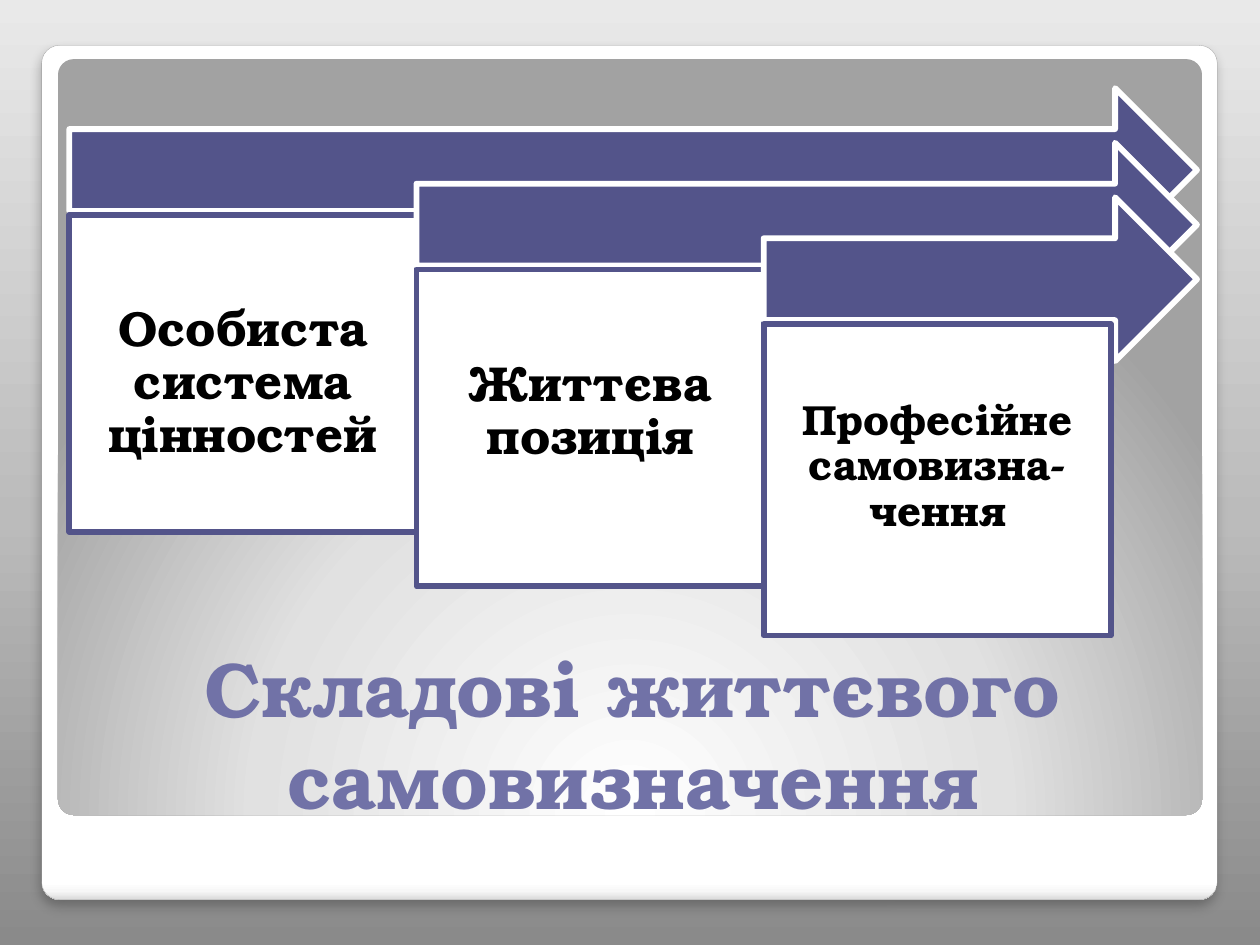
import pptx
import pptx.util
import pptx.dml.color
import pptx.enum.shapes
import pptx.enum.text
import pptx.oxml
import pptx.oxml.ns

Pt = pptx.util.Pt
MSO = pptx.enum.shapes.MSO_SHAPE
ANCHOR = pptx.enum.text.MSO_ANCHOR
CENTER = pptx.enum.text.PP_ALIGN.CENTER
FONT = "TeX Gyre Bonum"
NS = pptx.oxml.ns.nsdecls("a")

TITLE = "Складові життєвого самовизначення"
STEPS = [
    {"text": "Особиста система цінностей", "size": 28, "inset": 8.64, "top_inset": 51, "height": 181},
    {"text": "Життєва позиція", "size": 28, "inset": 8.64, "top_inset": 51, "height": 181},
    {"text": "Професійне самовизна-чення", "size": 24, "inset": 7.2, "top_inset": 43, "height": 178},
]
BACKGROUND = [(0, "8A8A8A"), (45, "BBBBBB"), (100, "E9E9E9")]
CARD = [(0, "FFFFFF"), (98, "FFFFFF"), (99, "F7F7F7"), (100, "DADADA")]
PANEL = [(0, "FFFFFF"), (55, "E1E1E1"), (100, "A2A2A2")]
RADIAL = ('<a:path path="circle"><a:fillToRect l="50000" t="175000" '
          'r="50000" b="-75000"/></a:path>')

LEFT, RIGHT, TOP = 39.6, 684, 50.4
STEP_X, STEP_Y = 198.4, 31.2
ARROW_H, BOX_DROP = 93.6, 72.4


def color(value):
    return pptx.dml.color.RGBColor.from_string(value)


def linear(angle):
    return f'<a:lin ang="{angle * 60000}" scaled="0"/>'


def set_gradient(fill, parent, stops, direction):
    fill.gradient()
    old = parent.find(pptx.oxml.ns.qn("a:gradFill"))
    marks = "".join(f'<a:gs pos="{pos * 1000}"><a:srgbClr val="{value}"/></a:gs>'
                    for pos, value in stops)
    new = pptx.oxml.parse_xml(
        f'<a:gradFill {NS} rotWithShape="1"><a:gsLst>{marks}</a:gsLst>{direction}</a:gradFill>')
    parent.replace(old, new)


def add_shape(kind, x, y, w, h, fill=None, line=None, width=3.35):
    sp = s.shapes.add_shape(kind, Pt(x), Pt(y), Pt(w), Pt(h))
    sp.shadow.inherit = False
    if fill:
        sp.fill.solid()
        sp.fill.fore_color.rgb = color(fill)
    if line:
        sp.line.color.rgb = color(line)
        sp.line.width = Pt(width)
    else:
        sp.line.fill.background()
    return sp


def add_round(x, y, w, h, stops, direction, line=None):
    sp = add_shape(MSO.ROUNDED_RECTANGLE, x, y, w, h, line=line, width=0.16)
    sp.adjustments[0] = 0.021
    set_gradient(sp.fill, sp._element.spPr, stops, direction)
    return sp


def set_text(tf, text, size, value):
    tf.text = text
    tf.word_wrap = True
    p = tf.paragraphs[0]
    p.alignment = CENTER
    font = p.runs[0].font
    font.name, font.size, font.bold = FONT, Pt(size), True
    font.color.rgb = color(value)
    return p


prs = pptx.Presentation()
prs.slide_width, prs.slide_height = Pt(720), Pt(540)
s = prs.slides.add_slide(prs.slide_layouts[5])
background = s.background.fill
background.solid()
bg_pr = s._element.cSld.find(".//" + pptx.oxml.ns.qn("p:bgPr"))
set_gradient(background, bg_pr, BACKGROUND, linear(270))

card = add_round(23.8, 25.9, 671.8, 488.2, CARD, linear(90), "A4A4A4")
effects = card._element.spPr.find(pptx.oxml.ns.qn("a:effectLst"))
effects.append(pptx.oxml.parse_xml(
    f'<a:outerShdw {NS} blurRad="{Pt(6)}" dist="{Pt(4)}" dir="5400000" rotWithShape="0">'
    '<a:srgbClr val="000000"><a:alpha val="25000"/></a:srgbClr></a:outerShdw>'))
add_round(33.1, 33.8, 653.8, 432, PANEL, RADIAL)

title = s.shapes.title
title.left, title.top, title.width, title.height = Pt(39.6), Pt(392.4), Pt(644.4), Pt(82.8)
set_text(title.text_frame, TITLE, 44, "7172A7")
title.text_frame.vertical_anchor = ANCHOR.BOTTOM
title.text_frame.auto_size = pptx.enum.text.MSO_AUTO_SIZE.NONE
s.shapes._spTree.append(title._element)

for i, step in enumerate(STEPS):
    x, y = LEFT + i * STEP_X, TOP + i * STEP_Y
    add_shape(MSO.RIGHT_ARROW, x, y, RIGHT - x, ARROW_H, "53548A", "FFFFFF")
    box = add_shape(MSO.RECTANGLE, x, y + BOX_DROP, STEP_X, step["height"], "FFFFFF", "53548A")
    tf = box.text_frame
    set_text(tf, step["text"], step["size"], "000000").line_spacing = 0.9
    tf.vertical_anchor = ANCHOR.TOP
    tf.margin_left = tf.margin_right = tf.margin_bottom = Pt(step["inset"])
    tf.margin_top = Pt(step["top_inset"])

prs.save("out.pptx")
